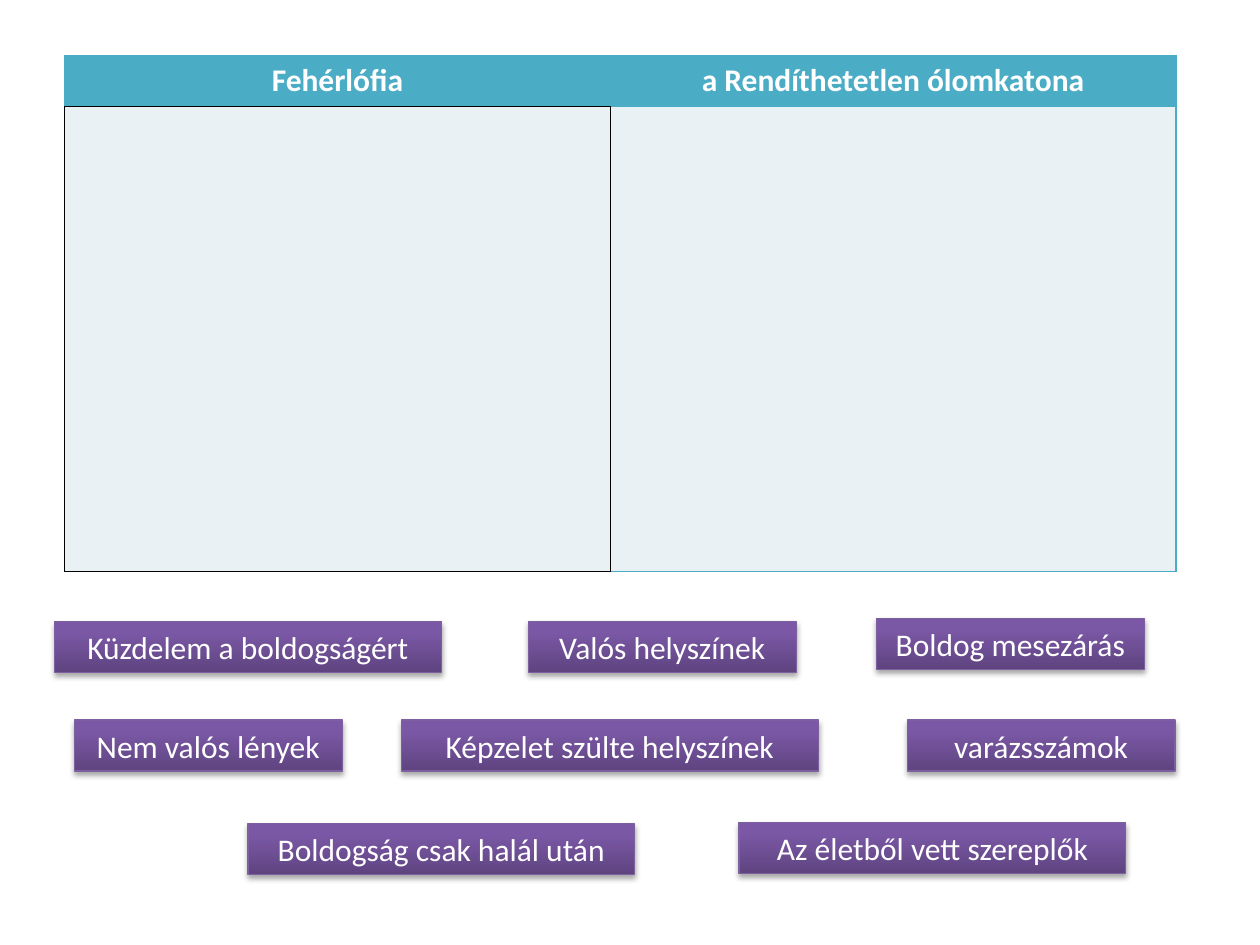
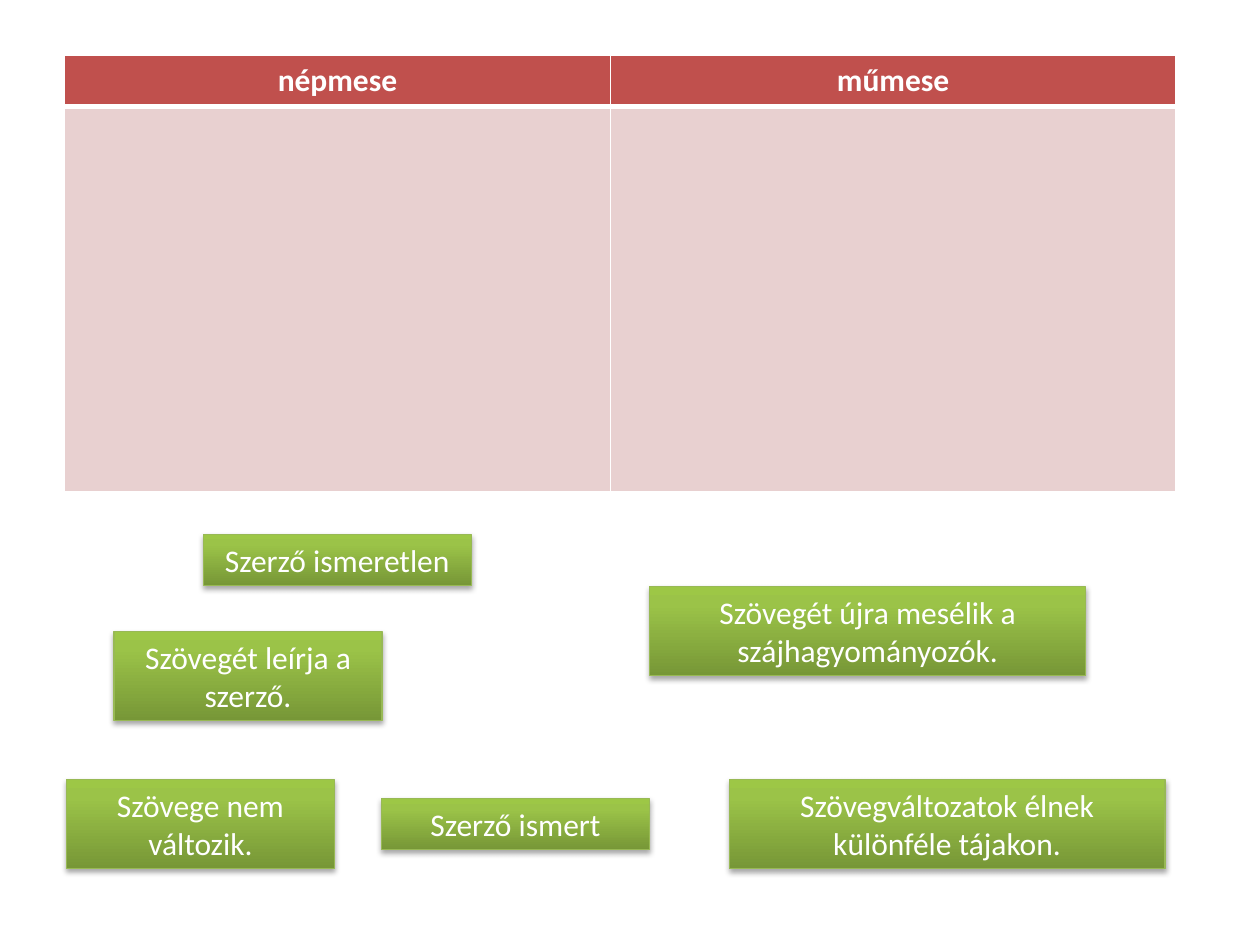
"""Two sorting exercises on tales: an empty two-column table above loose label boxes."""
import copy

import pptx
import pptx.dml.color
import pptx.enum.shapes
import pptx.enum.text
import pptx.oxml
import pptx.oxml.ns
import pptx.util
from lxml import etree

Pt = pptx.util.Pt
RGB = pptx.dml.color.RGBColor
qn = pptx.oxml.ns.qn

WHITE = RGB(0xFF, 0xFF, 0xFF)
BLACK = RGB(0, 0, 0)
TEAL = RGB(0x4B, 0xAC, 0xC6)
PALE_TEAL = RGB(0xE9, 0xF1, 0xF5)
RED = RGB(0xC0, 0x50, 0x4D)
PALE_RED = RGB(0xE8, 0xD0, 0xD0)
PURPLE_LINE = RGB(0x7D, 0x60, 0xA0)
PURPLES = [RGB(0x5F, 0x44, 0x80), RGB(0x7B, 0x58, 0xA6), RGB(0x7C, 0x57, 0xA8)]
GREEN_LINE = RGB(0x98, 0xB9, 0x55)
GREENS = [RGB(0x77, 0x97, 0x37), RGB(0x9B, 0xC3, 0x48), RGB(0x9D, 0xC7, 0x46)]

STOPS = [0, 0.8, 1]
FONT = "Calibri"
TABLE_LEFT, TABLE_TOP = 37, 31.8
COLUMNS = [311.8, 323.2]
ROW = 29.1
TALL = 50.9
SMALL, MEDIUM, LARGE, WIDE = 153.1, 221, 238.2, 249.1
SHADOW = (
    '<a:outerShdw xmlns:a="http://schemas.openxmlformats.org/drawingml/2006/main"'
    ' blurRad="40000" dist="23000" dir="5400000" rotWithShape="0">'
    '<a:srgbClr val="000000"><a:alpha val="35000"/></a:srgbClr></a:outerShdw>'
)


def write(tf, text, size=18, bold=False, color=WHITE):
    p = tf.paragraphs[0]
    p.alignment = pptx.enum.text.PP_ALIGN.CENTER
    r = p.add_run()
    r.text = text
    r.font.name = FONT
    r.font.size = Pt(size)
    r.font.bold = bold
    r.font.color.rgb = color


def set_borders(cell, edges):
    tcPr = cell._tc.get_or_add_tcPr()
    for side, (color, width) in zip("LRTB", edges):
        ln = etree.SubElement(tcPr, qn("a:ln" + side), w=str(Pt(width)))
        fill = etree.SubElement(ln, qn("a:solidFill"))
        etree.SubElement(fill, qn("a:srgbClr"), val=str(color))


teal, black = (TEAL, 1), (BLACK, 1)
white, thick = (WHITE, 1), (WHITE, 3)

SLIDES = [
    {
        "headings": ["Fehérlófia", "a Rendíthetetlen ólomkatona"],
        "body_height": 265.7,
        "fills": [TEAL, PALE_TEAL],
        "borders": [
            [[teal, teal, teal, black], [teal] * 4],
            [[black] * 4, [black, teal, teal, teal]],
        ],
        "stops": PURPLES,
        "line": PURPLE_LINE,
        "labels": [
            ("varázsszámok", 518.4, 411.5, SMALL, ROW),
            ("Képzelet szülte helyszínek", 229.4, 411.5, LARGE, ROW),
            ("Nem valós lények", 42.5, 411.5, SMALL, ROW),
            ("Boldog mesezárás", 500.8, 353.3, SMALL, ROW),
            ("Valós helyszínek", 301.9, 355, SMALL, ROW),
            ("Az életből vett szereplők", 422.4, 470, MEDIUM, ROW),
            ("Boldogság csak halál után", 141.7, 470.6, MEDIUM, ROW),
            ("Küzdelem a boldogságért", 31.2, 355, MEDIUM, ROW),
        ],
    },
    {
        "headings": ["népmese", "műmese"],
        "body_height": 220.2,
        "fills": [RED, PALE_RED],
        "borders": [
            [[white, white, white, thick]] * 2,
            [[white, white, thick, white]] * 2,
        ],
        "stops": GREENS,
        "line": GREEN_LINE,
        "labels": [
            ("Szerző ismeretlen", 116.2, 305.3, SMALL, ROW),
            ("Szerző ismert", 218, 456.4, SMALL, ROW),
            ("Szövegét leírja a szerző.", 65.2, 360.7, SMALL, TALL),
            ("Szövegét újra mesélik a szájhagyományozók.", 371.3, 335.2, WIDE, TALL),
            ("Szövege nem változik.", 38, 445.5, SMALL, TALL),
            ("Szövegváltozatok élnek különféle tájakon.", 416.7, 445.5, WIDE, TALL),
        ],
    },
]

prs = pptx.Presentation()
prs.slide_width, prs.slide_height = Pt(720), Pt(540)

for page in SLIDES:
    s = prs.slides.add_slide(prs.slide_layouts[6])

    heights = [ROW, page["body_height"]]
    table = s.shapes.add_table(
        2, 2, Pt(TABLE_LEFT), Pt(TABLE_TOP), Pt(sum(COLUMNS)), Pt(sum(heights))
    ).table
    for column, width in zip(table.columns, COLUMNS):
        column.width = Pt(width)
    for i, height in enumerate(heights):
        table.rows[i].height = Pt(height)
        for j, edges in enumerate(page["borders"][i]):
            cell = table.cell(i, j)
            set_borders(cell, edges)
            cell.fill.solid()
            cell.fill.fore_color.rgb = page["fills"][i]
    for j, heading in enumerate(page["headings"]):
        write(table.cell(0, j).text_frame, heading, bold=True)

    for text, left, top, width, height in page["labels"]:
        sp = s.shapes.add_shape(
            pptx.enum.shapes.MSO_SHAPE.RECTANGLE, Pt(left), Pt(top), Pt(width), Pt(height)
        )
        sp.fill.gradient()
        sp.fill.gradient_angle = 90
        stop_list = sp._element.spPr.find(".//" + qn("a:gsLst"))
        stop_list.append(copy.deepcopy(stop_list[-1]))
        for stop, position, color in zip(sp.fill.gradient_stops, STOPS, page["stops"]):
            stop.position = position
            stop.color.rgb = color
        sp.line.color.rgb = page["line"]
        sp.line.width = Pt(0.75)
        sp.shadow.inherit = False
        sp._element.spPr.find(qn("a:effectLst")).append(pptx.oxml.parse_xml(SHADOW))
        tf = sp.text_frame
        tf.word_wrap = True
        tf.auto_size = pptx.enum.text.MSO_AUTO_SIZE.SHAPE_TO_FIT_TEXT
        write(tf, text)

prs.save("out.pptx")
